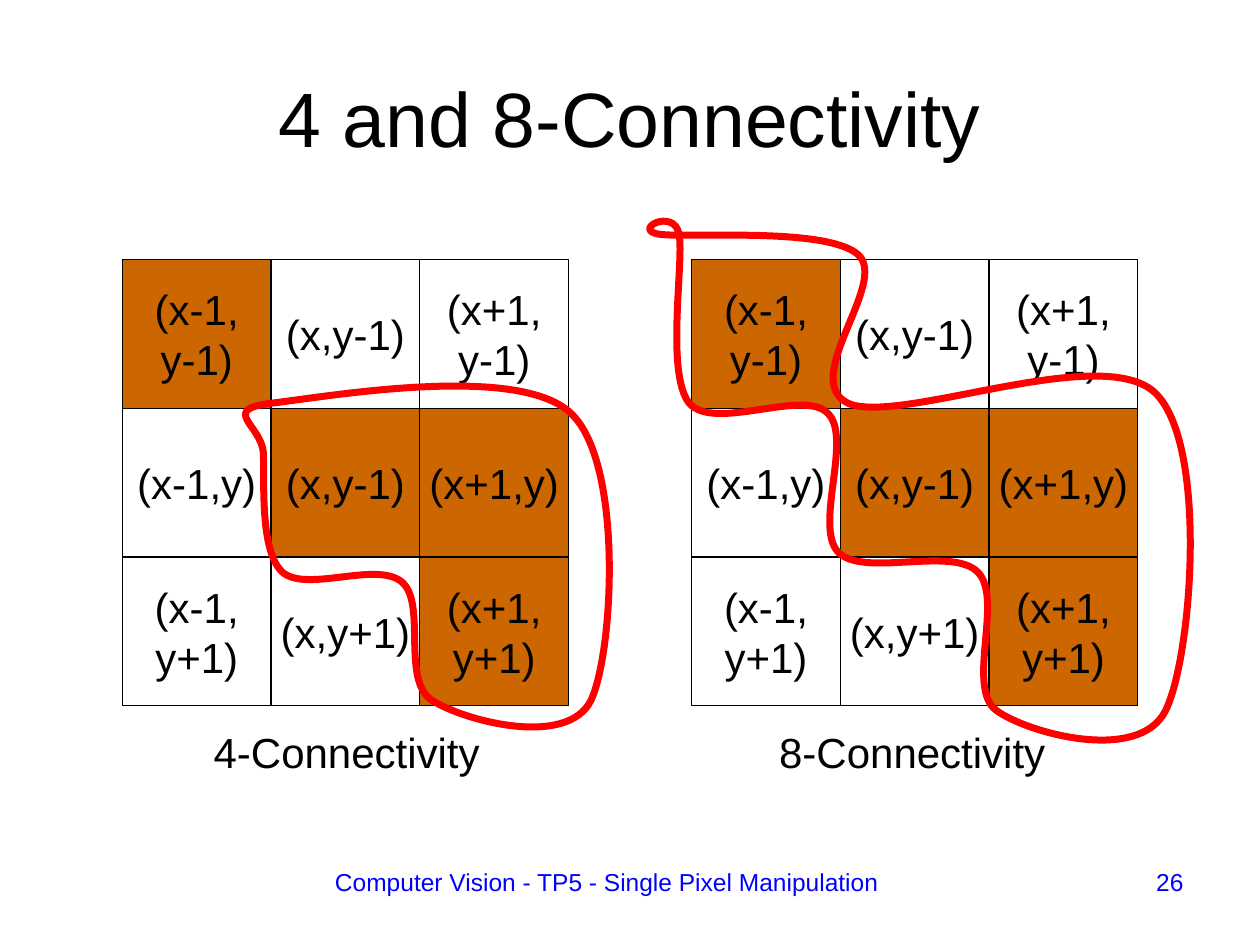
from lxml.etree import SubElement
from pptx import Presentation
from pptx.dml.color import RGBColor
from pptx.enum.shapes import MSO_SHAPE
from pptx.enum.text import MSO_ANCHOR, PP_ALIGN
from pptx.oxml.ns import qn
from pptx.util import Pt

CELL = 85
GRID_TOP = 148.3
CAPTION_TOP = 411.8
FOOTER_TOP = 491.8
LABELS = [
    ["(x-1,\vy-1)", "(x,y-1)", "(x+1,\vy-1)"],
    ["(x-1,y)", "(x,y-1)", "(x+1,y)"],
    ["(x-1,\vy+1)", "(x,y+1)", "(x+1,\vy+1)"],
]
CONNECTED = {(0, 0), (1, 1), (1, 2), (2, 2)}

# Bezier outlines in units of 0.72 pt: the start, then three points per curve
OUTLINE_UNIT = Pt(0.72)
FOUR_OUTLINE = [
    (209, 359),
    (210, 382), (206, 437), (224, 454),
    (243, 471), (299, 445), (319, 462),
    (339, 479), (318, 540), (343, 556),
    (368, 572), (450, 594), (469, 556),
    (487, 518), (495, 367), (453, 328),
    (411, 288), (259, 315), (216, 320),
    (174, 325), (207, 337), (209, 359),
]
EIGHT_OUTLINE = [
    (539, 186),
    (543, 208), (528, 296), (547, 320),
    (567, 343), (638, 308), (657, 328),
    (677, 347), (646, 417), (665, 438),
    (685, 459), (755, 433), (776, 454),
    (797, 475), (766, 546), (791, 564),
    (816, 582), (904, 606), (925, 564),
    (946, 522), (959, 353), (917, 312),
    (875, 271), (713, 338), (673, 320),
    (634, 301), (706, 224), (681, 202),
    (656, 180), (547, 189), (524, 186),
    (500, 183), (535, 164), (539, 186),
]
# grid left, caption left, caption, outline
DIAGRAMS = [
    (69.9, 70.6, "4-Connectivity", FOUR_OUTLINE),
    (395.2, 393.8, "8-Connectivity", EIGHT_OUTLINE),
]


def color(hex_value):
    return RGBColor.from_string(hex_value)


def write(shape, text, size, align=PP_ALIGN.CENTER, ink="000000",
          anchor=MSO_ANCHOR.TOP, wrap=True):
    """Fill a shape with one formatted paragraph; \\v breaks a line."""
    frame = shape.text_frame
    frame.text = text
    frame.word_wrap = wrap
    frame.vertical_anchor = anchor
    para = frame.paragraphs[0]
    para.alignment = align
    for span in para.runs:
        for name, value in {"name": "Arial", "size": Pt(size)}.items():
            setattr(span.font, name, value)
        span.font.color.rgb = color(ink)


deck = Presentation()
deck.slide_width, deck.slide_height = Pt(720), Pt(540)
page = deck.slides.add_slide(deck.slide_layouts[5])

title = page.shapes.title
title_place = {"left": 36, "top": 21.6, "width": 648, "height": 90}
for name, value in title_place.items():
    setattr(title, name, Pt(value))
write(title, "4 and 8-Connectivity", 44, anchor=MSO_ANCHOR.MIDDLE)

# Pixel grids with their captions
for grid_left, caption_left, caption, _ in DIAGRAMS:
    grid = page.shapes.add_group_shape()
    for row, labels in enumerate(LABELS):
        for column, label in enumerate(labels):
            cell = grid.shapes.add_shape(
                MSO_SHAPE.RECTANGLE, Pt(grid_left + column * CELL),
                Pt(GRID_TOP + row * CELL), Pt(CELL), Pt(CELL))
            cell.shadow.inherit = False
            if (row, column) in CONNECTED:
                cell.fill.solid()
                cell.fill.fore_color.rgb = color("CC6600")
            else:
                cell.fill.background()
            cell.line.color.rgb = color("000000")
            cell.line.width = Pt(0.75)
            write(cell, label, 24, anchor=MSO_ANCHOR.MIDDLE, wrap=False)
    box = page.shapes.add_textbox(
        Pt(caption_left), Pt(CAPTION_TOP), Pt(255), Pt(36))
    write(box, caption, 24)

# Red outlines around the connected pixels
for *_, points in DIAGRAMS:
    builder = page.shapes.build_freeform(*points[0], scale=OUTLINE_UNIT)
    builder.add_line_segments(points[1:], close=True)
    outline = builder.convert_to_shape()
    outline.shadow.inherit = False
    outline.fill.background()
    outline.line.color.rgb = color("FF0000")
    outline.line.width = Pt(4)
    # Every three straight segments become one cubic curve
    path = outline._element.find(".//" + qn("a:path"))
    segments = path.findall(qn("a:lnTo"))
    close = path.find(qn("a:close"))
    for start in range(0, len(segments), 3):
        curve = SubElement(path, qn("a:cubicBezTo"))
        for segment in segments[start:start + 3]:
            curve.append(segment[0])
            path.remove(segment)
    path.append(close)

footers = [
    (184.3, 442, "Computer Vision - TP5 - Single Pixel Manipulation",
     PP_ALIGN.LEFT),
    (632.2, 51.1, "26", PP_ALIGN.RIGHT),
]
for left, width, text, align in footers:
    box = page.shapes.add_textbox(
        Pt(left), Pt(FOOTER_TOP), Pt(width), Pt(37.4))
    write(box, text, 14, align, "0000FF")

deck.save("out.pptx")
